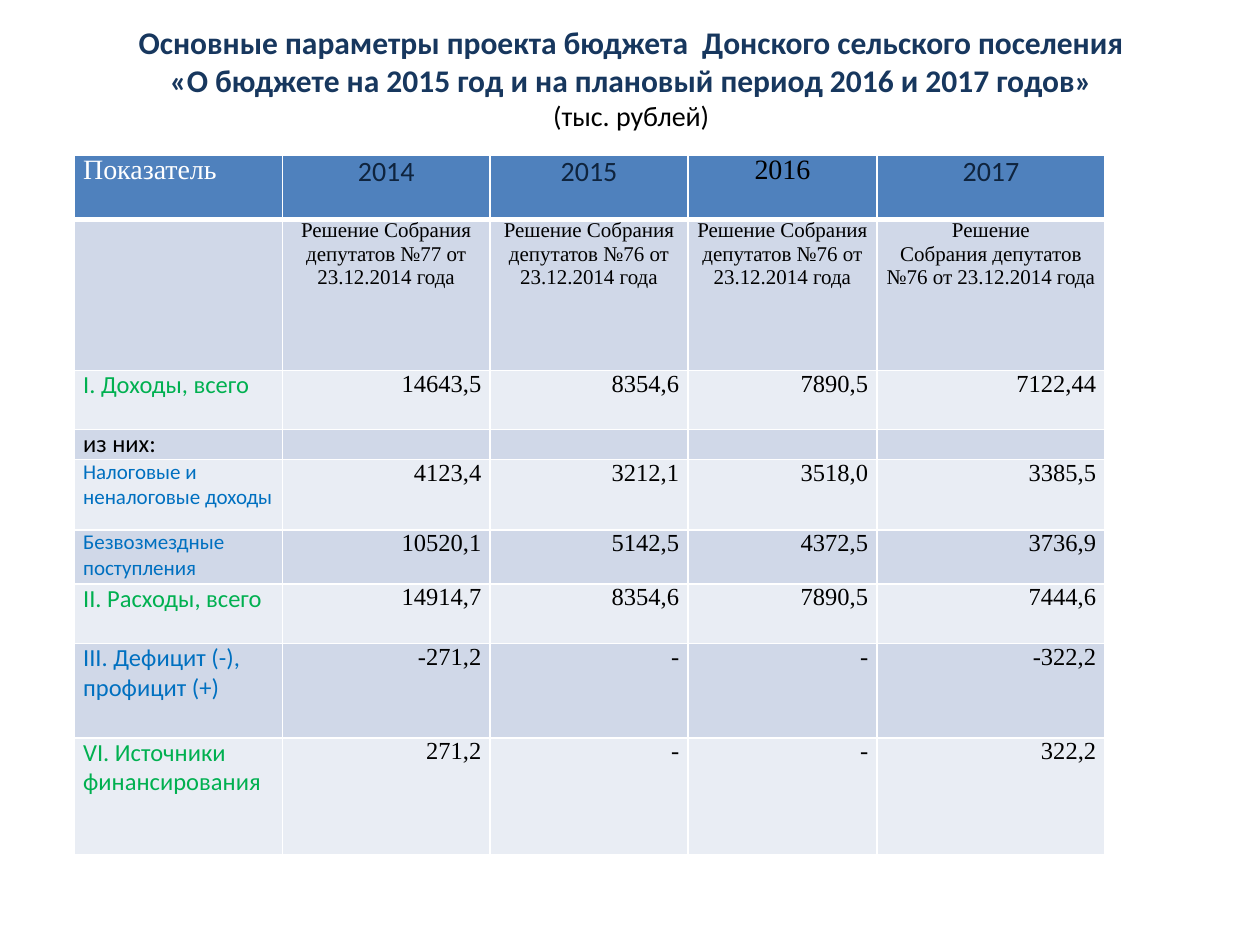
from lxml import etree
from pptx import Presentation
from pptx.dml.color import RGBColor
from pptx.enum.text import MSO_ANCHOR, PP_ALIGN
from pptx.oxml.ns import qn
from pptx.util import Inches, Pt

LEFT, MID, RIGHT = PP_ALIGN.LEFT, PP_ALIGN.CENTER, PP_ALIGN.RIGHT
CENTER = MSO_ANCHOR.MIDDLE
WHITE = RGBColor(0xFF, 0xFF, 0xFF)
BLACK = RGBColor(0x00, 0x00, 0x00)
NAVY = RGBColor(0x17, 0x37, 0x5E)
INK = RGBColor(0x0F, 0x24, 0x3E)
HEAD = RGBColor(0x4F, 0x81, 0xBD)
DARK = RGBColor(0xD0, 0xD8, 0xE8)
PALE = RGBColor(0xE9, 0xED, 0xF4)
GREEN = RGBColor(0x00, 0xB0, 0x50)
BLUE = RGBColor(0x00, 0x70, 0xC0)
SANS, SERIF = "Calibri", "Times New Roman"

COLS = [1.65, 1.65, 1.57, 1.5, 1.81]
ROWS = [0.51, 1.2, 0.47, 0.23, 0.56, 0.43, 0.47, 0.75, 0.93]
YEARS = [("2014", SANS, INK), ("2015", SANS, INK),
         ("2016", SERIF, BLACK), ("2017", SANS, INK)]
ACT = "Решение Собрания депутатов №{} от 23.12.2014 года"
ACTS = [[ACT.format(77)], [ACT.format(76)], [ACT.format(76)],
        ["Решение", "Собрания депутатов №76 от 23.12.2014 года"]]
ITEMS = [
    ("I. Доходы, всего", 14, GREEN, ["14643,5", "8354,6", "7890,5", "7122,44"]),
    ("из них:", 14, BLACK, [""] * 4),
    ("Налоговые и неналоговые доходы", 12, BLUE,
     ["4123,4", "3212,1", "3518,0", "3385,5"]),
    ("Безвозмездные поступления", 12, BLUE,
     ["10520,1", "5142,5", "4372,5", "3736,9"]),
    ("II. Расходы, всего", 14, GREEN, ["14914,7", "8354,6", "7890,5", "7444,6"]),
    ("III. Дефицит (-), профицит (+)", 14, BLUE, ["-271,2", "-", "-", "-322,2"]),
    ("VI. Источники финансирования", 14, GREEN, ["271,2", "-", "-", "322,2"]),
]


class Deck:
    """Holds the style and the current slide."""

    def __init__(self):
        self.prs = Presentation()
        self.prs.slide_width, self.prs.slide_height = Inches(10), Inches(7.5)
        self.slide = self.prs.slides.add_slide(self.prs.slide_layouts[5])

    def box(self, x, y, w, h):
        wide, high = self.prs.slide_width, self.prs.slide_height
        return int(x * wide), int(y * high), int(w * wide), int(h * high)

    def run(self, para, text, size, face, color, bold=False):
        run = para.add_run()
        run.text = text
        font = run.font
        font.size, font.name, font.bold = Pt(size), face, bold
        font.color.rgb = color

    def title(self, lines, *place):
        shape = self.slide.shapes.title
        shape.left, shape.top, shape.width, shape.height = self.box(*place)
        frame = shape.text_frame
        frame.vertical_anchor = CENTER
        para = frame.paragraphs[0]
        para.alignment = MID
        for i, line in enumerate(lines):
            if i:
                para.add_line_break()
            self.run(para, *line)

    def table(self, cols, rows, *place):
        frame = self.slide.shapes.add_table(len(rows), len(cols), *self.box(*place))
        self.grid = frame.table
        self.grid.first_row = self.grid.horz_banding = False
        for col, wide in zip(self.grid.columns, cols):
            col.width = Inches(wide)
        for row, high in zip(self.grid.rows, rows):
            row.height = Inches(high)

    def edge(self, cell, row):
        props = cell._tc.get_or_add_tcPr()
        for i, side in enumerate("LRTB"):
            thick = (row, side) in ((0, "B"), (1, "T"))
            line = etree.Element(qn(f"a:ln{side}"), w=str(Pt(3 if thick else 1)))
            fill = etree.SubElement(line, qn("a:solidFill"))
            etree.SubElement(fill, qn("a:srgbClr"), val=str(WHITE))
            props.insert(i, line)

    def cell(self, row, col, texts, size, face, color, align):
        cell = self.grid.cell(row, col)
        cell.margin_left = cell.margin_right = Inches(0.07)
        cell.margin_top = cell.margin_bottom = 0
        cell.fill.solid()
        cell.fill.fore_color.rgb = (DARK if row % 2 else PALE) if row else HEAD
        self.edge(cell, row)
        frame = cell.text_frame
        for i, text in enumerate(texts):
            para = frame.add_paragraph() if i else frame.paragraphs[0]
            para.alignment = align
            if text:
                self.run(para, text, size, face, color)
            else:
                etree.SubElement(para._p, qn("a:endParaRPr"), sz=str(size * 100))


def main():
    deck = Deck()
    deck.title([
        ("Основные параметры проекта бюджета  Донского сельского поселения",
         18, SANS, NAVY, True),
        ("«О бюджете на 2015 год и на плановый период 2016 и 2017 годов»",
         18, SANS, NAVY, True),
        ("(тыс. рублей)", 16, SANS, BLACK),
    ], 0.051, 0, 0.9, 0.164)
    deck.table(COLS, ROWS, 0.059, 0.164, 0.818, 0.74)
    deck.cell(0, 0, ["Показатель"], 16, SERIF, WHITE, LEFT)
    deck.cell(1, 0, [""], 12, SERIF, BLACK, LEFT)
    for col, ((year, face, color), act) in enumerate(zip(YEARS, ACTS), 1):
        deck.cell(0, col, [year], 16, face, color, MID)
        deck.cell(1, col, act, 12, SERIF, BLACK, MID)
    for row, (name, size, color, sums) in enumerate(ITEMS, 2):
        deck.cell(row, 0, [name], size, SANS, color, LEFT)
        for col, num in enumerate(sums, 1):
            deck.cell(row, col, [num], 14, SERIF, BLACK, RIGHT)
    deck.prs.save("out.pptx")


if __name__ == "__main__":
    main()
